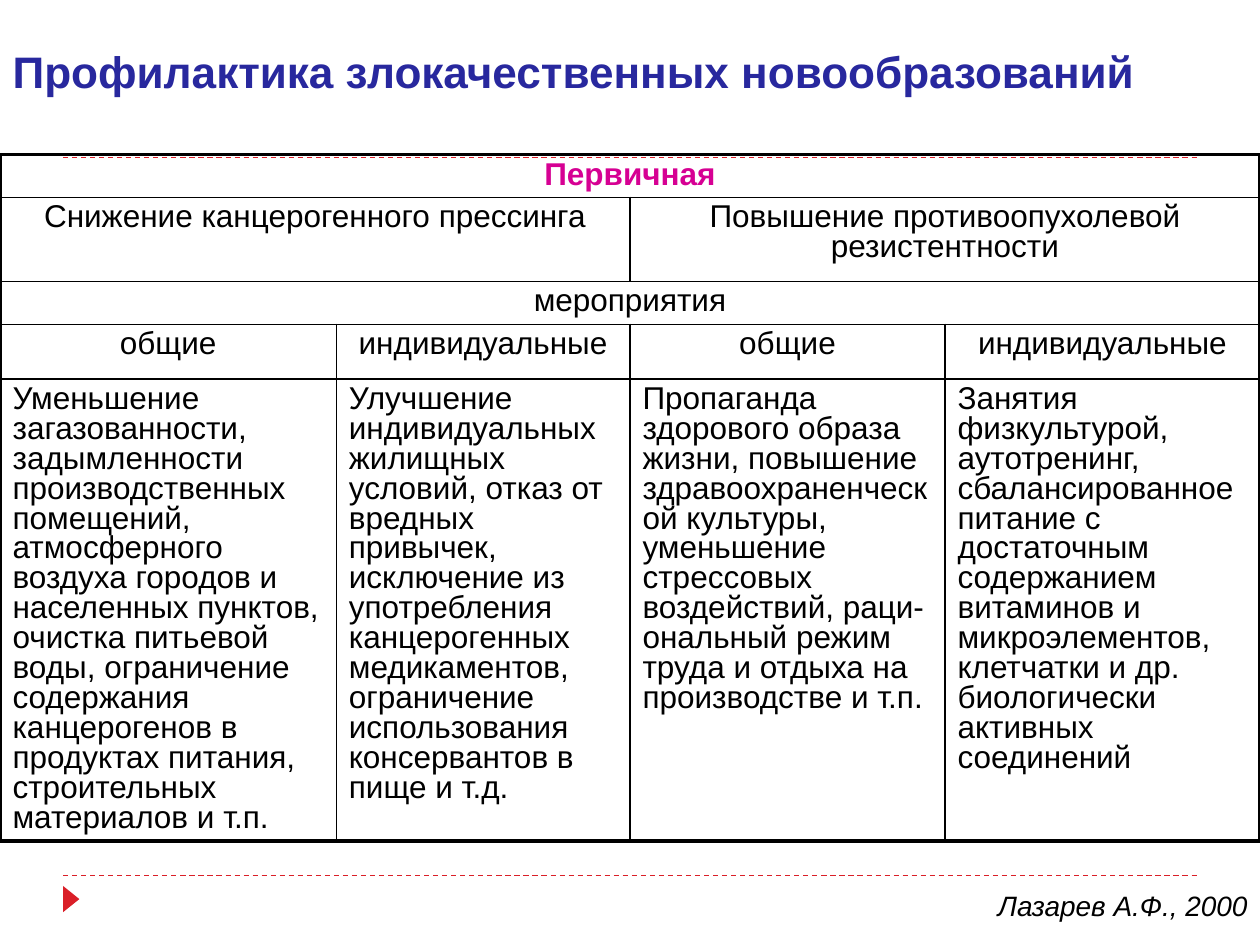
from dataclasses import dataclass

from pptx import Presentation
from pptx.dml.color import RGBColor
from pptx.enum.dml import MSO_LINE
from pptx.enum.shapes import MSO_CONNECTOR, MSO_SHAPE
from pptx.enum.text import MSO_ANCHOR as Anchor, MSO_AUTO_SIZE as AutoSize, PP_ALIGN as Align
from pptx.oxml.ns import qn
from pptx.util import Cm, Pt
from lxml.etree import SubElement


@dataclass(frozen=True)
class Theme:
    font: str = "Arial"
    title_color: str = "28289E"
    heading_color: str = "D60093"
    text_color: str = "000000"
    accent: str = "DA1F28"
    title_size: float = 25.2
    table_size: float = 18
    source_size: float = 16
    outer_border: float = 2.25
    inner_border: float = 1
    dash_width: float = 0.75
    line_spacing: float = 0.85


class SlideBuilder:
    def __init__(self, slide, theme):
        self.slide = slide
        self.theme = theme

    def fill_text(self, frame, text, size, color=None, align=Align.LEFT, spacing=None,
                  **font_format):
        frame.word_wrap = True
        paragraph = frame.paragraphs[0]
        paragraph.alignment = align
        paragraph.line_spacing = spacing
        run = paragraph.add_run()
        run.text = text
        values = {"name": self.theme.font, "size": Pt(size), "bold": False, **font_format}
        for name, value in values.items():
            setattr(run.font, name, value)
        run.font.color.rgb = RGBColor.from_string(color or self.theme.text_color)

    def title(self, text, left, top, width, height):
        shape = self.slide.shapes.title
        place = {"left": left, "top": top, "width": width, "height": height}
        for name, value in place.items():
            setattr(shape, name, Cm(value))
        frame = shape.text_frame
        frame.auto_size = AutoSize.NONE
        frame.vertical_anchor = Anchor.BOTTOM
        self.fill_text(frame, text, self.theme.title_size, self.theme.title_color, bold=True)

    def dashed_line(self, left, right, y):
        line = self.slide.shapes.add_connector(
            MSO_CONNECTOR.STRAIGHT, Cm(left), Cm(y), Cm(right), Cm(y))
        line.line.color.rgb = RGBColor.from_string(self.theme.accent)
        line.line.width = Pt(self.theme.dash_width)
        line.line.dash_style = MSO_LINE.DASH
        SubElement(line._element.spPr, qn("a:effectLst"))

    def marker(self, left, top, width, height):
        shape = self.slide.shapes.add_shape(
            MSO_SHAPE.ISOSCELES_TRIANGLE, Cm(left), Cm(top), Cm(width), Cm(height))
        shape.rotation = 90
        shape.shadow.inherit = False
        shape.fill.solid()
        shape.fill.fore_color.rgb = RGBColor.from_string(self.theme.accent)
        shape.line.fill.background()

    def text(self, text, left, top, width, height, **text_format):
        box = self.slide.shapes.add_textbox(Cm(left), Cm(top), Cm(width), Cm(height))
        self.fill_text(box.text_frame, text, **text_format)

    def borders(self, cell, outer_sides):
        properties = cell._tc.get_or_add_tcPr()
        for side in "LRTB":
            width = self.theme.outer_border if side in outer_sides else self.theme.inner_border
            line = SubElement(properties, qn(f"a:ln{side}"), w=str(int(Pt(width))))
            fill = SubElement(line, qn("a:solidFill"))
            SubElement(fill, qn("a:srgbClr"), val=self.theme.text_color)
        cell.fill.background()

    def table(self, rows, left, top, widths, heights):
        """Each row spreads its texts evenly over the columns."""
        column_count, last_row = len(widths), len(rows) - 1
        table = self.slide.shapes.add_table(
            len(rows), column_count, Cm(left), Cm(top), Cm(sum(widths)), Cm(sum(heights))).table
        table.first_row = table.horz_banding = False
        for column, width in zip(table.columns, widths):
            column.width = Cm(width)
        for row, height in zip(table.rows, heights):
            row.height = Cm(height)

        for row_index, texts in enumerate(rows):
            span = column_count // len(texts)
            for text_index, text in enumerate(texts):
                first = text_index * span
                last = first + span - 1
                edges = {"L": first == 0, "R": last == column_count - 1,
                         "T": row_index == 0, "B": row_index == last_row}
                outer_sides = [side for side, is_outer in edges.items() if is_outer]
                for column_index in range(first, last + 1):
                    self.borders(table.cell(row_index, column_index), outer_sides)
                cell = table.cell(row_index, first)
                if span > 1:
                    cell.merge(table.cell(row_index, last))
                is_heading = row_index == 0
                self.fill_text(
                    cell.text_frame, text, self.theme.table_size,
                    self.theme.heading_color if is_heading else None,
                    Align.LEFT if row_index == last_row else Align.CENTER,
                    self.theme.line_spacing, bold=is_heading)


ROWS = [
    ["Первичная"],
    ["Снижение канцерогенного прессинга", "Повышение противоопухолевой резистентности"],
    ["мероприятия"],
    ["общие", "индивидуальные"] * 2,
    [
        "Уменьшение загазованности, задымленности производственных помещений, "
        "атмосферного воздуха городов и населенных пунктов, очистка питьевой воды, "
        "ограничение содержания канцерогенов в продуктах питания, "
        "строительных материалов и т.п.",
        "Улучшение индивидуальных жилищных условий, отказ от вредных привычек, "
        "исключение из употребления канцерогенных медикаментов, "
        "ограничение использования консервантов в пище и т.д.",
        "Пропаганда здорового образа жизни, повышение здравоохраненческой культуры, "
        "уменьшение стрессовых воздействий, раци-ональный режим труда и отдыха "
        "на производстве и т.п.",
        "Занятия физкультурой, аутотренинг, сбалансированное питание с достаточным "
        "содержанием витаминов и микроэлементов, клетчатки и др. "
        "биологически активных соединений",
    ],
]


def main():
    presentation = Presentation()
    presentation.slide_width, presentation.slide_height = Cm(25.4), Cm(19.05)
    theme = Theme()
    builder = SlideBuilder(presentation.slides.add_slide(presentation.slide_layouts[5]), theme)

    # Rules and corner marker
    for y in (17.65, 3.18):
        builder.dashed_line(1.27, 24.13, y)
    builder.marker(1.17, 17.96, 0.53, 0.33)

    # Title
    builder.title("Профилактика злокачественных новообразований", 0, 0.2, 25.4, 1.9)

    # Prevention measures
    builder.table(ROWS, 0, 3.12, widths=[6.78, 5.92, 6.35, 6.35],
                  heights=[0.85, 1.7, 0.85, 1.1, 9.31])

    # Source
    builder.text("Лазарев А.Ф., 2000", 17.58, 17.78, 7.82, 0.94,
                 size=theme.source_size, align=Align.RIGHT, italic=True)

    presentation.save("out.pptx")


if __name__ == "__main__":
    main()
